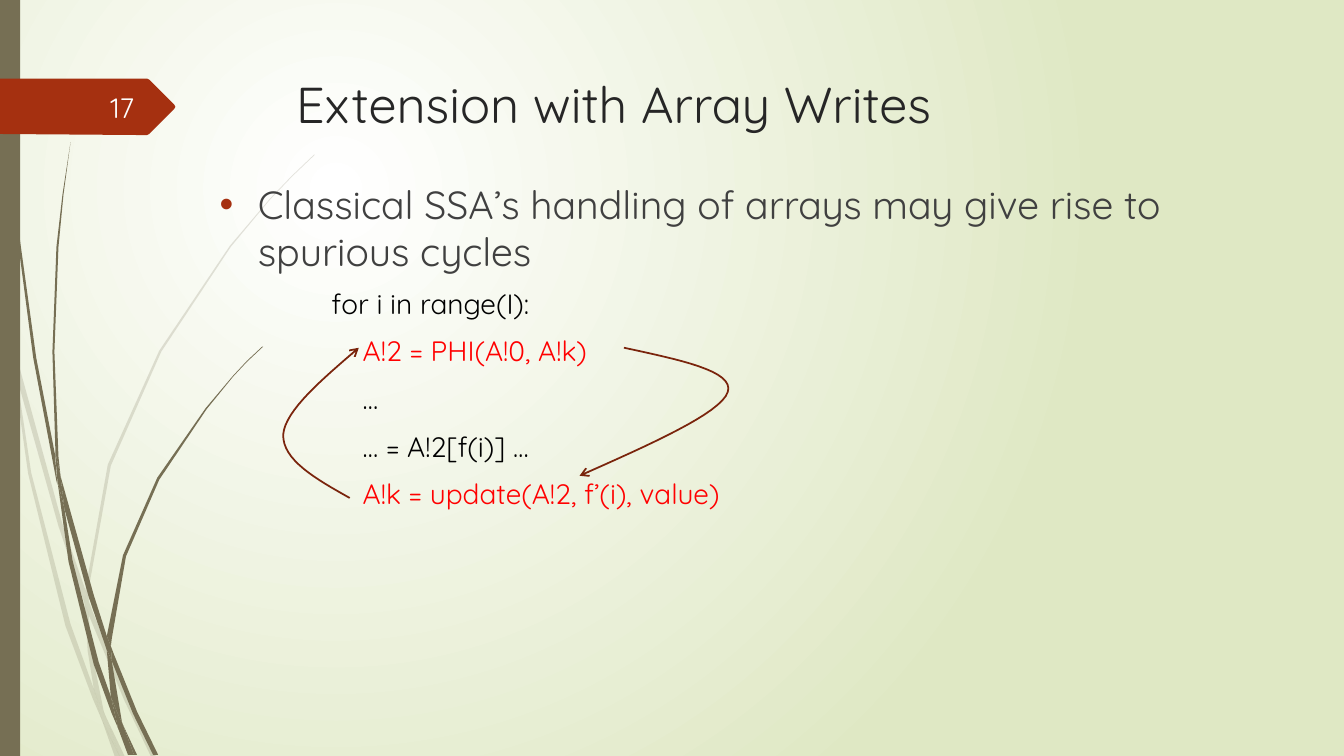
from lxml.etree import SubElement
from pptx import Presentation
from pptx.dml.color import RGBColor
from pptx.enum.shapes import MSO_SHAPE as Preset
from pptx.enum.text import MSO_ANCHOR as Anchor, PP_ALIGN as Align
from pptx.oxml.ns import qn
from pptx.util import Pt

PX = 9144
FONT = "Quicksand"
WHITE = RGBColor(0xFF, 0xFF, 0xFF)
PALE_GREEN = RGBColor(0xDF, 0xE8, 0xC4)
OLIVE = RGBColor(0x76, 0x6F, 0x54)
RUST = RGBColor(0xA5, 0x30, 0x10)
BROWN = RGBColor(0x7A, 0x24, 0x0C)
RED = RGBColor(0xFF, 0, 0)
BLACK = RGBColor(0, 0, 0)
INK = RGBColor(0x26, 0x26, 0x26)
GREY = RGBColor(0x40, 0x40, 0x40)
NEAR_WHITE = RGBColor(0xFE, 0xFF, 0xFF)

FAINT_GRASS = [
    [(11, 350), (9, 322), (0, 282), (0, 299), (10, 344)],
    [(58, 522), (84, 599), (85, 586), (62, 520), (14, 345), (17, 376)],
    [(92, 607), (88, 596), (88, 610), (123, 694), (150, 751), (155, 751), (127, 692)],
    [(119, 751), (124, 751), (105, 711)],
    [(93, 683), (70, 619), (31, 469), (17, 376), (11, 350), (28, 470), (65, 621),
     (92, 693), (101, 714), (99, 707)],
    [(84, 599), (87, 646), (93, 683), (96, 692), (105, 711), (103, 706), (91, 646),
     (88, 610), (88, 608)],
    [(88, 584), (110, 462), (160, 349), (229, 245), (268, 198), (290, 175), (312, 154),
     (312, 153), (289, 175), (268, 197), (228, 244), (158, 348), (107, 461), (85, 584),
     (85, 586), (88, 596)],
    [(101, 714), (114, 751), (119, 751)],
    [(88, 608), (88, 610), (88, 596), (85, 586), (84, 599)],
    [(96, 692), (93, 683), (99, 707), (101, 714), (119, 751), (105, 711)],
]
GRASS = [
    [(7, 110), (17, 233), (33, 355), (56, 477), (57, 481), (55, 457), (55, 453),
     (36, 355), (19, 232), (8, 109), (5, 48), (4, 0), (3, 0), (4, 48)],
    [(88, 592), (106, 645), (106, 633), (106, 631), (93, 590), (60, 472), (64, 505)],
    [(113, 649), (110, 641), (111, 656), (132, 708), (152, 749), (157, 749), (136, 706)],
    [(110, 691), (98, 657), (72, 556), (64, 505), (57, 477), (68, 557), (93, 659),
     (111, 708), (117, 722), (116, 717)],
    [(60, 472), (58, 453), (54, 349), (58, 245), (63, 193), (70, 141), (62, 193),
     (56, 245), (52, 349), (55, 449)],
    [(133, 749), (136, 749), (122, 719)],
    [(57, 477), (64, 505), (60, 472), (55, 449), (55, 453)],
    [(111, 633), (125, 552), (158, 476), (205, 406), (231, 374), (245, 359), (261, 344),
     (260, 344), (245, 358), (231, 373), (204, 405), (156, 474), (122, 551), (106, 631),
     (110, 641)],
    [(117, 722), (127, 749), (131, 749)],
    [(106, 645), (110, 691), (116, 706), (122, 719), (121, 716), (111, 656), (109, 651)],
    [(106, 645), (109, 651), (111, 656), (110, 641), (106, 631), (106, 633)],
    [(116, 706), (110, 691), (116, 717), (117, 722), (130, 749), (133, 749), (122, 719)],
]
PAGE_TAG = [(173, 108), (148, 133), (146, 134), (136, 134), (0, 133), (0, 78),
            (146, 78), (148, 79), (173, 104), (174, 106)]
CYCLE_ARROWS = [
    [(347, 494), (313, 475), (280, 456), (281, 431), (283, 407), (320, 376), (356, 345)],
    [(619, 345), (674, 357), (729, 368), (722, 389), (715, 410), (645, 441), (575, 472)],
]
CODE = [
    (0, "for i in range(I):", BLACK),
    (31, "A!2 = PHI(A!0, A!k)", RED),
    (31, "…", BLACK),
    (31, "… = A!2[f(i)] …", BLACK),
    (31, "A!k = update(A!2, f’(i), value)", RED),
]


def cubic(ends, t):
    """Return the point at t on a cubic curve given by four points."""
    weights = ((1 - t) ** 3, 3 * t * (1 - t) ** 2, 3 * t * t * (1 - t), t ** 3)
    return tuple(sum(w * p[axis] for w, p in zip(weights, ends)) for axis in (0, 1))


class Painter:
    """Draws styled elements on the current slide, in px of 1/100 inch."""

    def __init__(self, slide):
        self.slide = slide
        self.shapes = slide.shapes

    def background(self, inner, outer):
        """Fill the slide with a round gradient centred at upper left."""
        fill = self.slide.background.fill
        fill.gradient()
        for stop, color in zip(fill.gradient_stops, (inner, outer)):
            stop.color.rgb = color
        gradient = self.slide._element.find(".//" + qn("a:gradFill"))
        gradient.remove(gradient.find(qn("a:lin")))
        circle = SubElement(gradient, qn("a:path"), {"path": "circle"})
        SubElement(circle, qn("a:fillToRect"),
                   {"l": "50000", "t": "50000", "r": "100000", "b": "100000"})

    def paint(self, shape, color, opacity=100):
        """Give a shape a flat fill without line or shadow."""
        shape.shadow.inherit = False
        shape.line.fill.background()
        shape.fill.solid()
        shape.fill.fore_color.rgb = color
        if opacity < 100:
            tint = shape._element.spPr.find(".//" + qn("a:srgbClr"))
            SubElement(tint, qn("a:alpha"), {"val": str(opacity * 1000)})

    def rect(self, left, top, width, height, color):
        """Add a filled rectangle."""
        box = (v * PX for v in (left, top, width, height))
        self.paint(self.shapes.add_shape(Preset.RECTANGLE, *box), color)

    def outline(self, points, close):
        """Add a freeform through the points."""
        start, *rest = [(x * PX, y * PX) for x, y in points]
        builder = self.shapes.build_freeform(*start)
        builder.add_line_segments(rest, close=close)
        return builder.convert_to_shape()

    def polygon(self, points, color, opacity=100):
        """Add a closed, filled outline."""
        self.paint(self.outline(points, True), color, opacity)

    def curved_arrow(self, knots, color, steps=16):
        """Add an open curve of cubic pieces with an arrowhead at its end."""
        points = [knots[0]]
        for first in range(0, len(knots) - 1, 3):
            points += [cubic(knots[first:first + 4], i / steps) for i in range(1, steps + 1)]
        arrow = self.outline(points, False)
        arrow.shadow.inherit = False
        arrow.fill.background()
        arrow.line.color.rgb = color
        arrow.line.width = Pt(1.25)
        SubElement(arrow.line._get_or_add_ln(), qn("a:tailEnd"), {"type": "arrow"})

    def text(self, left, top, width, height, lines, size,
             align=Align.LEFT, anchor=Anchor.TOP, bullet=None):
        """Add a text box of (indent, words, color) lines."""
        box = (v * PX for v in (left, top, width, height))
        frame = self.shapes.add_textbox(*box).text_frame
        frame.word_wrap = True
        frame.vertical_anchor = anchor
        for i, (indent, words, color) in enumerate(lines):
            para = frame.add_paragraph() if i else frame.paragraphs[0]
            para.alignment = align
            para.space_before = Pt(10 if i else 0)
            props = para._p.get_or_add_pPr()
            props.set("marL", str(indent * PX))
            if bullet:
                props.set("indent", str(-indent * PX))
                tint = SubElement(props, qn("a:buClr"))
                SubElement(tint, qn("a:srgbClr"), {"val": str(bullet)})
                SubElement(props, qn("a:buFont"), {"typeface": "Arial"})
                SubElement(props, qn("a:buChar"), {"char": "•"})
            run = para.add_run()
            run.text = words
            run.font.name = FONT
            run.font.size = Pt(size)
            run.font.color.rgb = color


def main():
    """Build the slide and save it."""
    deck = Presentation()
    deck.slide_width, deck.slide_height = 12192000, 750 * PX
    painter = Painter(deck.slides.add_slide(deck.slide_layouts[6]))
    painter.background(WHITE, PALE_GREEN)
    for blade in FAINT_GRASS:
        painter.polygon(blade, OLIVE, opacity=20)
    for blade in GRASS:
        painter.polygon(blade, OLIVE)
    painter.rect(0, 0, 20, 750, OLIVE)
    painter.polygon(PAGE_TAG, RUST)
    painter.text(284, 68, 975, 77, [(0, "Extension with Array Writes", INK)], 36)
    claim = "Classical SSA’s handling of arrays may give rise to spurious cycles"
    painter.text(208, 174, 1051, 537, [(38, claim, GREY)], 28, bullet=RUST)
    painter.text(58, 86, 85, 40, [(0, "17", NEAR_WHITE)], 20, Align.RIGHT, Anchor.MIDDLE)
    painter.text(319, 279, 565, 260, CODE, 20)
    for knots in CYCLE_ARROWS:
        painter.curved_arrow(knots, BROWN)
    deck.save("out.pptx")


if __name__ == "__main__":
    main()
